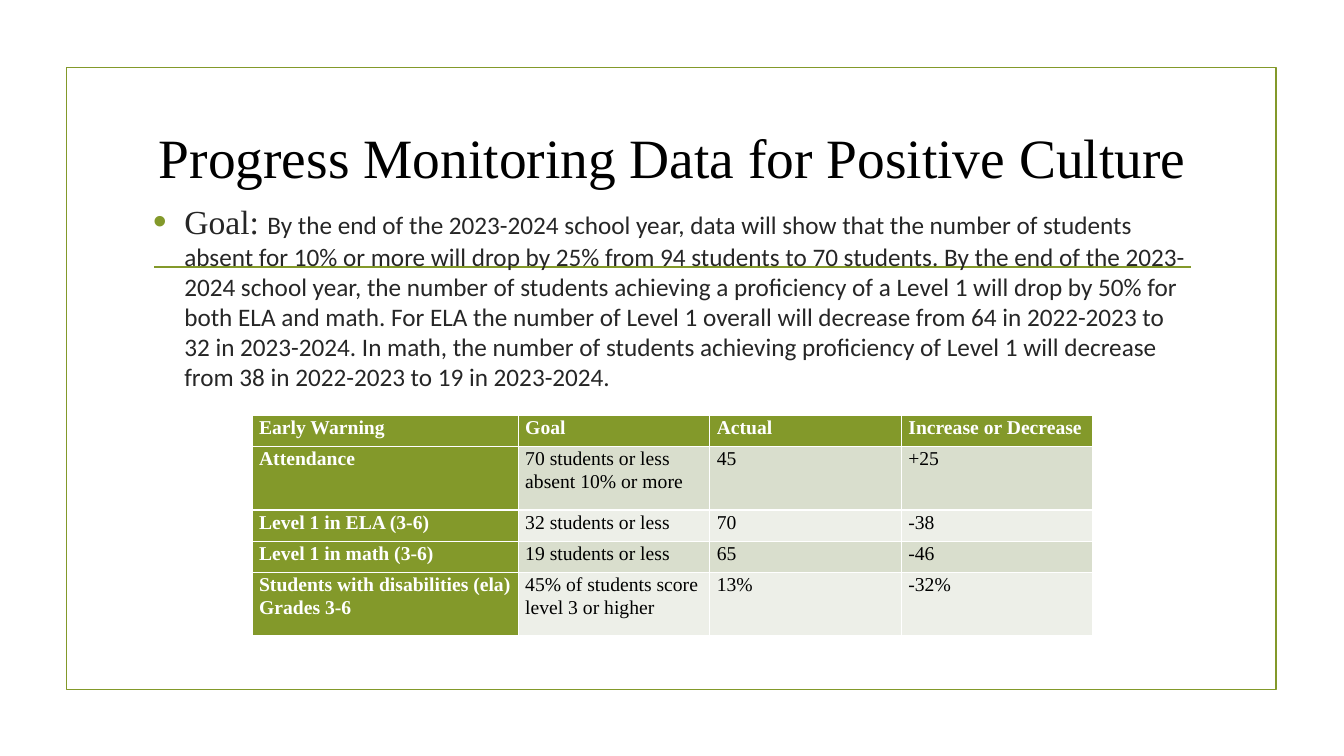
from lxml import etree
from pptx import Presentation
from pptx.dml.color import RGBColor
from pptx.enum.shapes import MSO_CONNECTOR, MSO_SHAPE
from pptx.enum.text import MSO_ANCHOR, PP_ALIGN
from pptx.oxml.ns import qn
from pptx.util import Inches, Pt

STRAIGHT, RECTANGLE = MSO_CONNECTOR.STRAIGHT, MSO_SHAPE.RECTANGLE
MIDDLE, CENTER = MSO_ANCHOR.MIDDLE, PP_ALIGN.CENTER

GREEN = RGBColor(0x83, 0x99, 0x2A)
DARK_BAND = RGBColor(0xD9, 0xDE, 0xCD)
LIGHT_BAND = RGBColor(0xED, 0xEF, 0xE8)
BODY_INK = RGBColor(0x26, 0x26, 0x26)
BLACK = RGBColor(0, 0, 0)
WHITE = RGBColor(0xFF, 0xFF, 0xFF)
SERIF, SANS = "Times New Roman", "Calibri"

TITLE = "Progress Monitoring Data for Positive Culture"
GOAL_LABEL = "Goal: "
GOAL = (
    "By the end of the 2023-2024 school year, data will show that the number of "
    "students absent for 10% or more will drop by 25% from 94 students to 70 students. "
    "By the end of the 2023-2024 school year, the number of students achieving a "
    "proficiency of a Level 1 will drop by 50% for both ELA and math. For ELA the number "
    "of Level 1 overall will decrease from 64 in 2022-2023 to 32 in 2023-2024. In math, "
    "the number of students achieving proficiency of Level 1 will decrease from 38 in "
    "2022-2023 to 19 in 2023-2024."
)
RESULTS = [
    ["Early Warning", "Goal", "Actual", "Increase or Decrease"],
    ["Attendance", "70 students or less absent 10% or more", "45", "+25"],
    ["Level 1 in ELA (3-6)", "32 students or less", "70", "-38"],
    ["Level 1 in math (3-6)", "19 students or less", "65", "-46"],
    ["Students with disabilities (ela) Grades 3-6",
     "45% of students score level 3 or higher", "13%", "-32%"],
]
COLUMN_WIDTHS = [2.64, 1.9, 1.9, 1.9]
ROW_HEIGHTS = [0.31, 0.63, 0.31, 0.31, 0.63]


def style_font(font, name, size, color, bold=False):
    font.name, font.size, font.bold = name, Pt(size), bold
    font.color.rgb = color


def add_frame(slide, left, top, width, height):
    """Draw the green border and the rule across its upper part."""
    border = slide.shapes.add_shape(
        RECTANGLE, Inches(left), Inches(top), Inches(width), Inches(height))
    border.shadow.inherit = False
    border.fill.background()
    rule_y = Inches(top + 1.98)
    rule = slide.shapes.add_connector(
        STRAIGHT, Inches(left + 0.87), rule_y, Inches(left + width - 0.85), rule_y)
    etree.SubElement(rule._element.spPr, qn("a:effectLst"))
    for outline in (border.line, rule.line):
        outline.color.rgb = GREEN
        outline.width = Pt(1.25)


def place_title(slide, left, top, width, height):
    title = slide.shapes.title
    title.left, title.top = Inches(left), Inches(top)
    title.width, title.height = Inches(width), Inches(height)
    title.text_frame.text = TITLE
    title.text_frame.vertical_anchor = MIDDLE
    heading = title.text_frame.paragraphs[0]
    heading.alignment = CENTER
    style_font(heading.font, SERIF, 39.6, BLACK)


def add_bullet(paragraph):
    properties = paragraph._p.get_or_add_pPr()
    properties.set("marL", str(Inches(0.31)))
    properties.set("indent", str(-Inches(0.31)))
    bullet_color = etree.SubElement(properties, qn("a:buClr"))
    etree.SubElement(bullet_color, qn("a:srgbClr"), val=str(GREEN))
    etree.SubElement(properties, qn("a:buSzPct"), val="115000")
    etree.SubElement(properties, qn("a:buFont"), typeface="Arial")
    etree.SubElement(properties, qn("a:buChar"), char="•")


def add_goal(slide, left, top, width, height):
    box = slide.shapes.add_textbox(
        Inches(left), Inches(top), Inches(width), Inches(height))
    box.text_frame.word_wrap = True
    statement = box.text_frame.paragraphs[0]
    add_bullet(statement)
    for text, name, size in ((GOAL_LABEL, SERIF, 24), (GOAL, SANS, 18)):
        run = statement.add_run()
        run.text = text
        style_font(run.font, name, size, BODY_INK)


def add_results(slide, left, top):
    """Build the table; the first row and column are green, the rest banded."""
    table = slide.shapes.add_table(
        len(RESULTS), len(COLUMN_WIDTHS), Inches(left), Inches(top),
        Inches(sum(COLUMN_WIDTHS)), Inches(sum(ROW_HEIGHTS))).table
    table.first_col = True
    for column, width in zip(table.columns, COLUMN_WIDTHS):
        column.width = Inches(width)
    for r, (row, height) in enumerate(zip(table.rows, ROW_HEIGHTS)):
        row.height = Inches(height)
        band = DARK_BAND if r % 2 else LIGHT_BAND
        for c, cell in enumerate(row.cells):
            is_header = r == 0 or c == 0
            cell.text = RESULTS[r][c]
            cell.margin_left = cell.margin_right = Inches(0.07)
            cell.margin_top = cell.margin_bottom = 0
            cell.fill.solid()
            cell.fill.fore_color.rgb = GREEN if is_header else band
            entry = cell.text_frame.paragraphs[0]
            entry.line_spacing = 1.07
            style_font(entry.font, SERIF, 14, WHITE if is_header else BLACK, is_header)


def main():
    presentation = Presentation()
    presentation.slide_width = Inches(13.33)
    presentation.slide_height = Inches(7.5)
    slide = presentation.slides.add_slide(presentation.slide_layouts[5])
    add_frame(slide, 0.66, 0.67, 12, 6.17)
    place_title(slide, 1.42, 1.07, 10.5, 0.96)
    add_goal(slide, 1.42, 1.94, 10.5, 3.63)
    add_results(slide, 2.5, 4.12)
    presentation.save("out.pptx")


if __name__ == "__main__":
    main()
